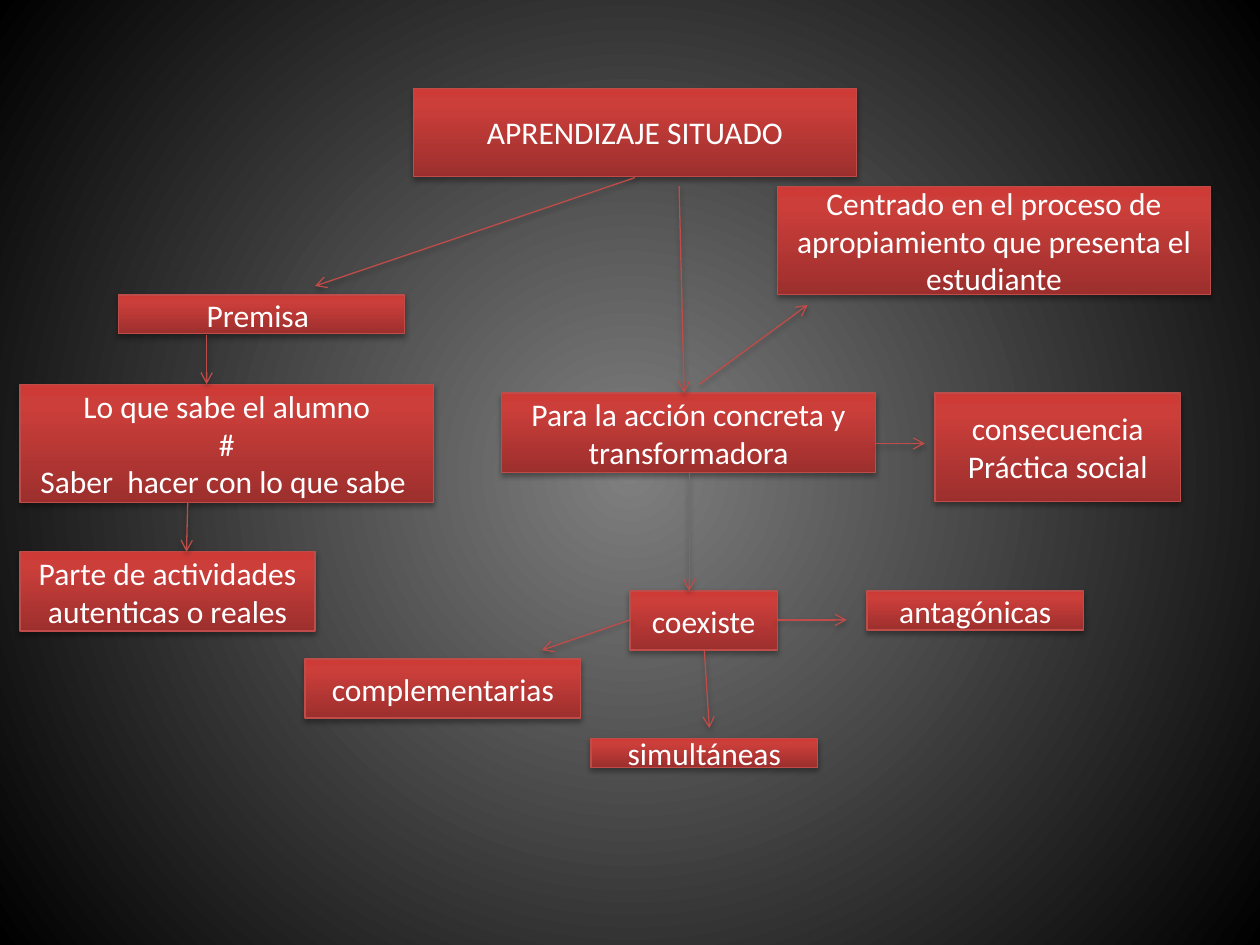
"""Build a concept map slide about situated learning."""
import pptx
import pptx.dml.color
import pptx.enum.shapes
import pptx.enum.text
import pptx.oxml
import pptx.oxml.ns
import pptx.util

Inches = pptx.util.Inches
RGBColor = pptx.dml.color.RGBColor
GRAY = RGBColor(0x7F, 0x7F, 0x7F)
BLACK = RGBColor(0, 0, 0)
WHITE = RGBColor(0xFF, 0xFF, 0xFF)
DARK = RGBColor(0x9C, 0x2F, 0x2D)
RED = RGBColor(0xCB, 0x3E, 0x3A)
BRIGHT = RGBColor(0xCE, 0x3B, 0x37)
EDGE = RGBColor(0xBF, 0x4C, 0x48)
NS = pptx.oxml.ns.nsdecls("a")


def blend(old, stops, way):
    marks = "".join(
        f'<a:gs pos="{pos * 1000}"><a:srgbClr val="{tint}"/></a:gs>'
        for pos, tint in stops
    )
    xml = f'<a:gradFill {NS} rotWithShape="1"><a:gsLst>{marks}</a:gsLst>{way}</a:gradFill>'
    old.getparent().replace(old, pptx.oxml.parse_xml(xml))


def finish(item):
    item.line.color.rgb = EDGE
    item.line.width = pptx.util.Pt(0.75)
    props = item._element.spPr
    for old in props.findall(pptx.oxml.ns.qn("a:effectLst")):
        props.remove(old)
    props.append(pptx.oxml.parse_xml(
        f'<a:effectLst {NS}><a:outerShdw blurRad="40000" dist="23000" dir="5400000" '
        f'rotWithShape="0"><a:srgbClr val="{BLACK}"><a:alpha val="35000"/></a:srgbClr>'
        '</a:outerShdw></a:effectLst>'))


deck = pptx.Presentation()
deck.slide_width, deck.slide_height = Inches(10), Inches(7.5)
slide = deck.slides.add_slide(deck.slide_layouts[6])
slide.background.fill.gradient()
blend(slide.element.xpath(".//p:bgPr/a:gradFill")[0], [(0, GRAY), (100, BLACK)],
      '<a:path path="circle"><a:fillToRect l="50000" t="50000" r="50000" b="50000"/></a:path>')

boxes = [
    (3.28, 0.7, 3.52, 0.7, ["APRENDIZAJE SITUADO"]),
    (0.94, 2.34, 2.27, 0.31, ["Premisa "]),
    (0.16, 3.05, 3.28, 0.94,
     ["Lo que sabe el alumno", "#", "Saber  hacer con lo que sabe "]),
    (0.16, 4.38, 2.34, 0.63, ["Parte de actividades autenticas o reales"]),
    (3.98, 3.12, 2.97, 0.63, ["Para la acción concreta y transformadora"]),
    (6.17, 1.48, 3.44, 0.86,
     ["Centrado en el proceso de apropiamiento que presenta el estudiante"]),
    (7.42, 3.12, 1.95, 0.86, ["consecuencia", "Práctica social"]),
    (5, 4.69, 1.17, 0.47, ["coexiste"]),
    (6.88, 4.69, 1.72, 0.31, ["antagónicas"]),
    (4.69, 5.86, 1.8, 0.23, ["simultáneas"]),
    (2.42, 5.23, 2.19, 0.47, ["complementarias"]),
]
for left, top, width, height, lines in boxes:
    box = slide.shapes.add_shape(
        pptx.enum.shapes.MSO_SHAPE.RECTANGLE,
        Inches(left), Inches(top), Inches(width), Inches(height))
    box.shadow.inherit = False
    box.fill.gradient()
    blend(box._element.xpath("./p:spPr/a:gradFill")[0],
          [(0, DARK), (80, RED), (100, BRIGHT)],
          '<a:lin ang="16200000" scaled="0"/>')
    finish(box)
    frame = box.text_frame
    frame.word_wrap = True
    frame.vertical_anchor = pptx.enum.text.MSO_ANCHOR.MIDDLE
    for i, line in enumerate(lines):
        para = frame.add_paragraph() if i else frame.paragraphs[0]
        para.alignment = pptx.enum.text.PP_ALIGN.CENTER
        run = para.add_run()
        run.text = line
        run.font.name = "Calibri"
        run.font.size = pptx.util.Pt(18)
        run.font.color.rgb = WHITE

arrows = [
    (5.04, 1.41, 2.5, 2.27),
    (1.64, 2.66, 1.64, 3.05),
    (1.49, 3.99, 1.48, 4.38),
    (5.39, 1.48, 5.43, 3.12),
    (5.55, 3.05, 6.41, 2.42),
    (6.95, 3.52, 7.34, 3.52),
    (5.47, 3.75, 5.47, 4.69),
    (5, 4.92, 4.3, 5.16),
    (6.17, 4.92, 6.72, 4.92),
    (5.59, 5.16, 5.63, 5.78),
]
for ends in arrows:
    arrow = slide.shapes.add_connector(
        pptx.enum.shapes.MSO_CONNECTOR.STRAIGHT, *map(Inches, ends))
    finish(arrow)
    arrow.line._get_or_add_ln().append(
        pptx.oxml.parse_xml(f'<a:tailEnd {NS} type="arrow"/>'))

deck.save("out.pptx")
